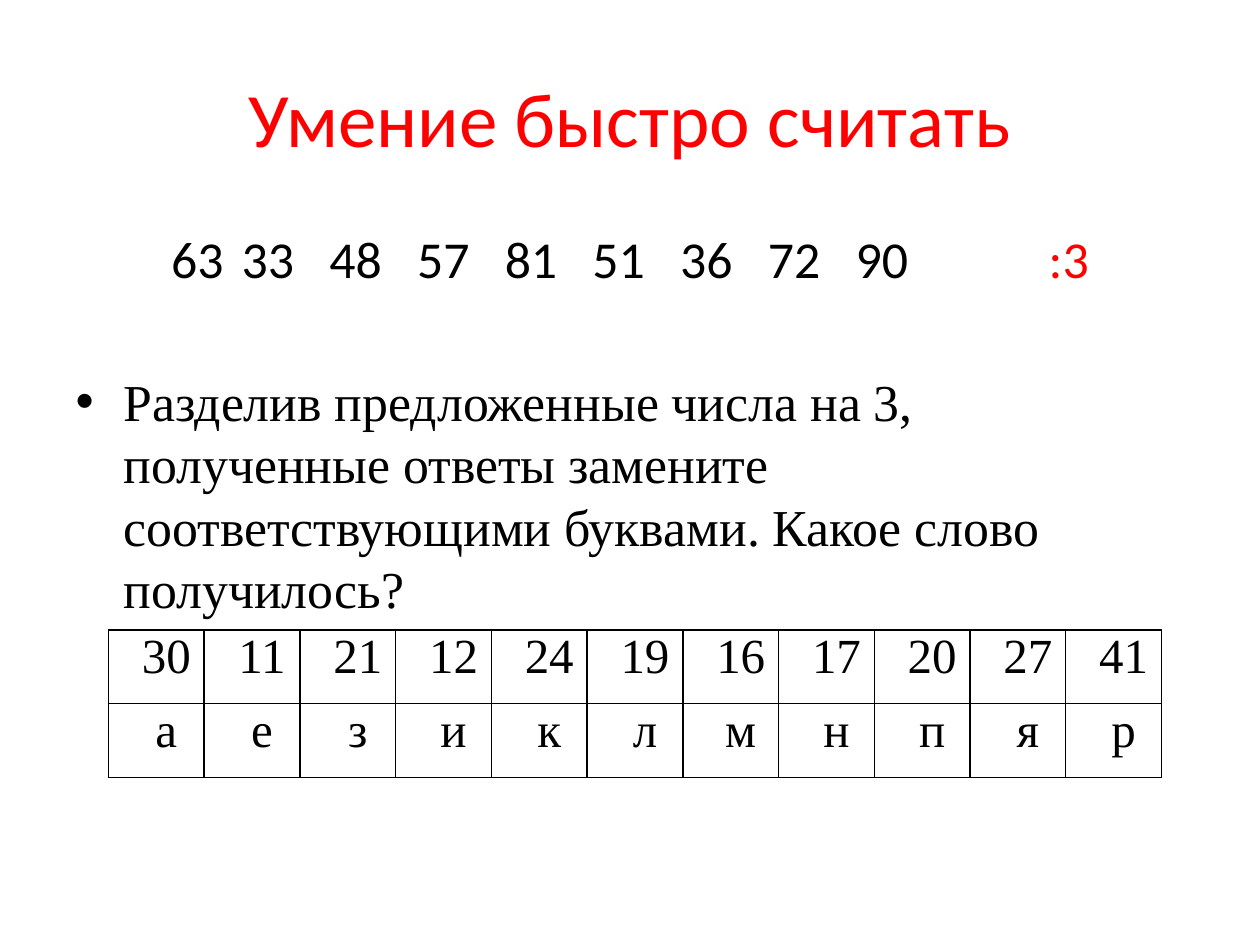
from lxml import etree
from pptx import Presentation
from pptx.dml.color import RGBColor
from pptx.enum.text import MSO_ANCHOR, MSO_AUTO_SIZE, PP_ALIGN
from pptx.oxml.ns import qn
from pptx.util import Inches, Pt

CENTER = PP_ALIGN.CENTER
LEFT = PP_ALIGN.LEFT
MIDDLE = MSO_ANCHOR.MIDDLE
TOP = MSO_ANCHOR.TOP
NO_AUTOFIT = MSO_AUTO_SIZE.NONE

BLACK, RED, WHITE = "000000", "FF0000", "FFFFFF"
SANS, SERIF = "Calibri", "Times New Roman"
BODY_SIZE = 29.6
SPACE_WIDTH = 0.226 * BODY_SIZE

DIVIDENDS = [33, 48, 57, 81, 51, 36, 72, 90]
TASK = (
    "Разделив предложенные числа на 3, полученные ответы замените "
    "соответствующими буквами. Какое слово получилось?"
)
LETTER_CODES = [
    ("30", "а"), ("11", "е"), ("21", "з"), ("12", "и"), ("24", "к"), ("19", "л"),
    ("16", "м"), ("17", "н"), ("20", "п"), ("27", "я"), ("41", "р"),
]


def color(value):
    """Return the colour for a hex string."""
    return RGBColor.from_string(value)


def set_font(font, name, size, value):
    """Set typeface, size and colour of a font."""
    font.name = name
    font.size = Pt(size)
    font.color.rgb = color(value)


def place(shape, left, top, width, height):
    """Move and size a shape, in inches."""
    shape.left, shape.top = Inches(left), Inches(top)
    shape.width, shape.height = Inches(width), Inches(height)


def set_indent(paragraph, left, first=0):
    """Set the left margin and first-line indent, in inches."""
    properties = paragraph._p.get_or_add_pPr()
    properties.set("marL", str(Inches(left)))
    properties.set("indent", str(Inches(first)))


def add_bullet(paragraph, typeface, tag, **attributes):
    """Give a paragraph a bullet or an automatic number."""
    properties = paragraph._p.get_or_add_pPr()
    bullet_font = etree.Element(qn("a:buFont"), typeface=typeface)
    bullet = etree.Element(qn(tag), **attributes)
    following = properties.find(qn("a:defRPr"))
    for element in (bullet_font, bullet):
        if following is None:
            properties.append(element)
        else:
            following.addprevious(element)


def add_run(paragraph, text, value=BLACK):
    """Add a coloured run."""
    run = paragraph.add_run()
    run.text = text
    set_font(run.font, SANS, BODY_SIZE, value)
    return run


def add_gap(paragraph, spaces):
    """Add one space tracked out to the width of several."""
    run = add_run(paragraph, " ")
    tracking = round((spaces - 1) * SPACE_WIDTH * 100)
    run._r.get_or_add_rPr().set("spc", str(tracking))


def fill_title(title):
    """Write the slide title."""
    place(title, 0.5, 0.3, 9, 1.25)
    frame = title.text_frame
    frame.text = "Умение быстро считать"
    frame.vertical_anchor = MIDDLE
    paragraph = frame.paragraphs[0]
    paragraph.alignment = CENTER
    set_font(paragraph.font, SANS, 44, RED)


def fill_body(body):
    """Write the row of numbers and the task."""
    place(body, 0.5, 1.75, 9, 3.09)
    frame = body.text_frame
    frame.auto_size = NO_AUTOFIT
    frame.vertical_anchor = TOP

    numbers = frame.paragraphs[0]
    numbers.alignment = CENTER
    set_indent(numbers, 0.56, -0.56)
    add_bullet(numbers, SANS, "a:buAutoNum", type="arabicPlain", startAt="63")
    for position, dividend in enumerate(DIVIDENDS):
        if position:
            add_gap(numbers, 3)
        add_run(numbers, str(dividend))
    add_gap(numbers, 12)
    add_run(numbers, ":3", RED)

    task = frame.add_paragraph()
    task.alignment = LEFT
    task.space_before = Pt(46)
    task.line_spacing = Pt(35.6)
    set_indent(task, 0.38, -0.38)
    add_bullet(task, "Arial", "a:buChar", char="•")
    run = task.add_run()
    run.text = TASK
    set_font(run.font, SERIF, BODY_SIZE, BLACK)


def add_borders(cell):
    """Draw a thin black line on each side of a cell."""
    properties = cell._tc.get_or_add_tcPr()
    for position, side in enumerate(("a:lnL", "a:lnR", "a:lnT", "a:lnB")):
        line = etree.Element(qn(side), w=str(Pt(1)))
        fill = etree.SubElement(line, qn("a:solidFill"))
        etree.SubElement(fill, qn("a:srgbClr"), val=BLACK)
        properties.insert(position, line)


def fill_cell(cell, text):
    """Write and format one table cell."""
    cell.fill.solid()
    cell.fill.fore_color.rgb = color(WHITE)
    cell.margin_left = cell.margin_right = Inches(0.01)
    cell.margin_top = cell.margin_bottom = 0
    cell.text = text
    paragraph = cell.text_frame.paragraphs[0]
    paragraph.alignment = CENTER
    set_indent(paragraph, 0.16)
    set_font(paragraph.font, SERIF, 28, BLACK)
    add_borders(cell)


def add_code_table(slide):
    """Add the table that pairs answers with letters."""
    rows = list(zip(*LETTER_CODES))
    frame = slide.shapes.add_table(
        len(rows), len(LETTER_CODES),
        Inches(0.86), Inches(5), Inches(8.36), Inches(1.17),
    )
    table = frame.table
    table.first_row = False
    table.horz_banding = False
    for row_index, texts in enumerate(rows):
        for column_index, text in enumerate(texts):
            fill_cell(table.cell(row_index, column_index), text)


def main():
    """Build and save the slide."""
    presentation = Presentation()
    presentation.slide_width = Inches(10)
    presentation.slide_height = Inches(7.5)
    slide = presentation.slides.add_slide(presentation.slide_layouts[1])
    fill_title(slide.shapes.title)
    fill_body(slide.placeholders[1])
    add_code_table(slide)
    presentation.save("out.pptx")


if __name__ == "__main__":
    main()
